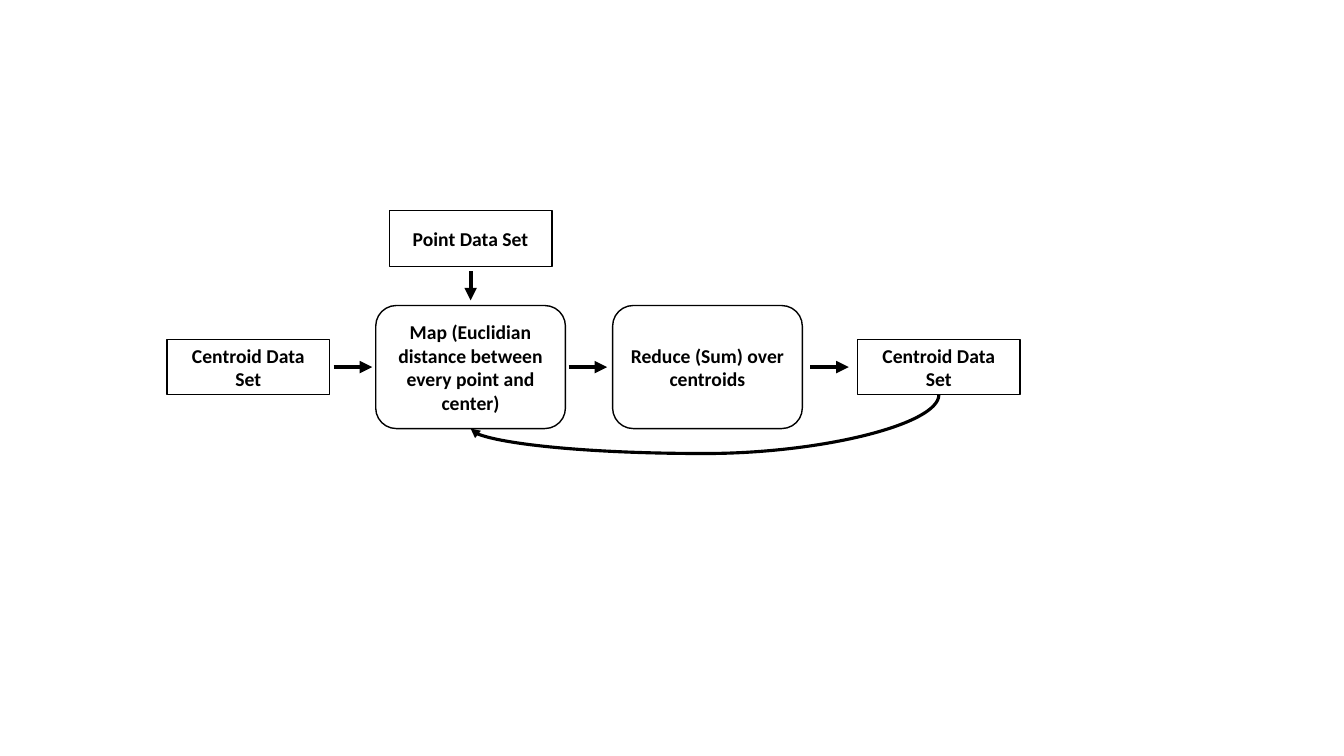
from pptx import Presentation
from pptx import util as u
from pptx.dml.color import RGBColor
from pptx.enum import shapes, text
from pptx.oxml.ns import qn
from lxml import etree

COLORS = {"ink": "000000", "paper": "FFFFFF"}


def color(name):
    return RGBColor.from_string(COLORS[name])


def write_text(shape, words, size=14, bold=True, font="Calibri", ink="ink"):
    frame = shape.text_frame
    frame.word_wrap = True
    frame.vertical_anchor = text.MSO_ANCHOR.MIDDLE
    paragraph = frame.paragraphs[0]
    paragraph.alignment = text.PP_ALIGN.CENTER
    run = paragraph.add_run()
    run.text = words
    run.font.size = u.Pt(size)
    run.font.bold = bold
    run.font.name = font
    run.font.color.rgb = color(ink)


class Diagram:
    """Draws boxes and arrows on one slide; all lengths are centimetres."""

    DATA = (shapes.MSO_SHAPE.RECTANGLE, 4.1, 1.4)
    STEP = (shapes.MSO_SHAPE.ROUNDED_RECTANGLE, 4.78, 3.1)

    def __init__(self, slide):
        self.slide = slide

    def box(self, kind, words, center_x, center_y):
        preset, width, height = kind
        box = self.slide.shapes.add_shape(
            preset, u.Cm(center_x - width / 2), u.Cm(center_y - height / 2),
            u.Cm(width), u.Cm(height))
        box.shadow.inherit = False
        box.fill.solid()
        box.fill.fore_color.rgb = color("paper")
        box.line.color.rgb = color("ink")
        box.line.width = u.Pt(1)
        write_text(box, words)
        return box

    def arrow(self, x1, y1, x2, y2, kind=shapes.MSO_CONNECTOR.STRAIGHT, weight=3):
        arrow = self.slide.shapes.add_connector(
            kind, u.Cm(x1), u.Cm(y1), u.Cm(x2), u.Cm(y2))
        arrow.line.color.rgb = color("ink")
        arrow.line.width = u.Pt(weight)
        etree.SubElement(arrow.line._get_or_add_ln(), qn("a:tailEnd"), type="triangle")
        etree.SubElement(arrow._element.spPr, qn("a:effectLst"))
        return arrow

    def loop_below(self, source, target, bulge):
        """Curve from the bottom of source to the bottom of target."""
        loop = self.arrow(0, 0, 1, 1, shapes.MSO_CONNECTOR.CURVE, weight=2.25)
        loop.begin_connect(source, 2)
        loop.end_connect(target, 2)
        # Turn the frame a quarter so that the curve leaves downwards
        span = loop.begin_x - loop.end_x
        drop = loop.end_y - loop.begin_y
        middle_x = (loop.begin_x + loop.end_x) // 2
        middle_y = (loop.begin_y + loop.end_y) // 2
        loop.left, loop.top = middle_x - drop // 2, middle_y - span // 2
        loop.width, loop.height = drop, span
        frame = loop._element.spPr.find(qn("a:xfrm"))
        frame.set("rot", str(90 * 60000))
        frame.set("flipH", "0")
        geometry = loop._element.spPr.find(qn("a:prstGeom"))
        guides = geometry.find(qn("a:avLst"))
        if guides is None:
            guides = etree.SubElement(geometry, qn("a:avLst"))
        etree.SubElement(guides, qn("a:gd"), name="adj1",
                         fmla=f"val {round(bulge * 100000)}")


def main():
    deck = Presentation()
    deck.slide_width, deck.slide_height = u.Cm(33.87), u.Cm(19.05)
    diagram = Diagram(deck.slides.add_slide(deck.slide_layouts[6]))
    row_y, map_x = 9.25, 11.86

    # Data sets and steps
    map_step = diagram.box(
        diagram.STEP, "Map (Euclidian distance between every point and center)",
        map_x, row_y)
    diagram.box(diagram.DATA, "Point Data Set", map_x, 6.01)
    diagram.box(diagram.DATA, "Centroid Data Set", 6.26, row_y)
    diagram.box(diagram.STEP, "Reduce (Sum) over centroids", 17.83, row_y)
    new_centroids = diagram.box(diagram.DATA, "Centroid Data Set", 23.66, row_y)

    # Flow into the map step and along the row
    diagram.arrow(map_x, 6.83, map_x, 7.57)
    for start_x in (8.41, 14.33, 20.42):
        diagram.arrow(start_x, row_y, start_x + 0.97, row_y)

    # Iteration: new centroids return to the map step
    diagram.loop_below(new_centroids, map_step, bulge=1.74)

    deck.save("out.pptx")


if __name__ == "__main__":
    main()
